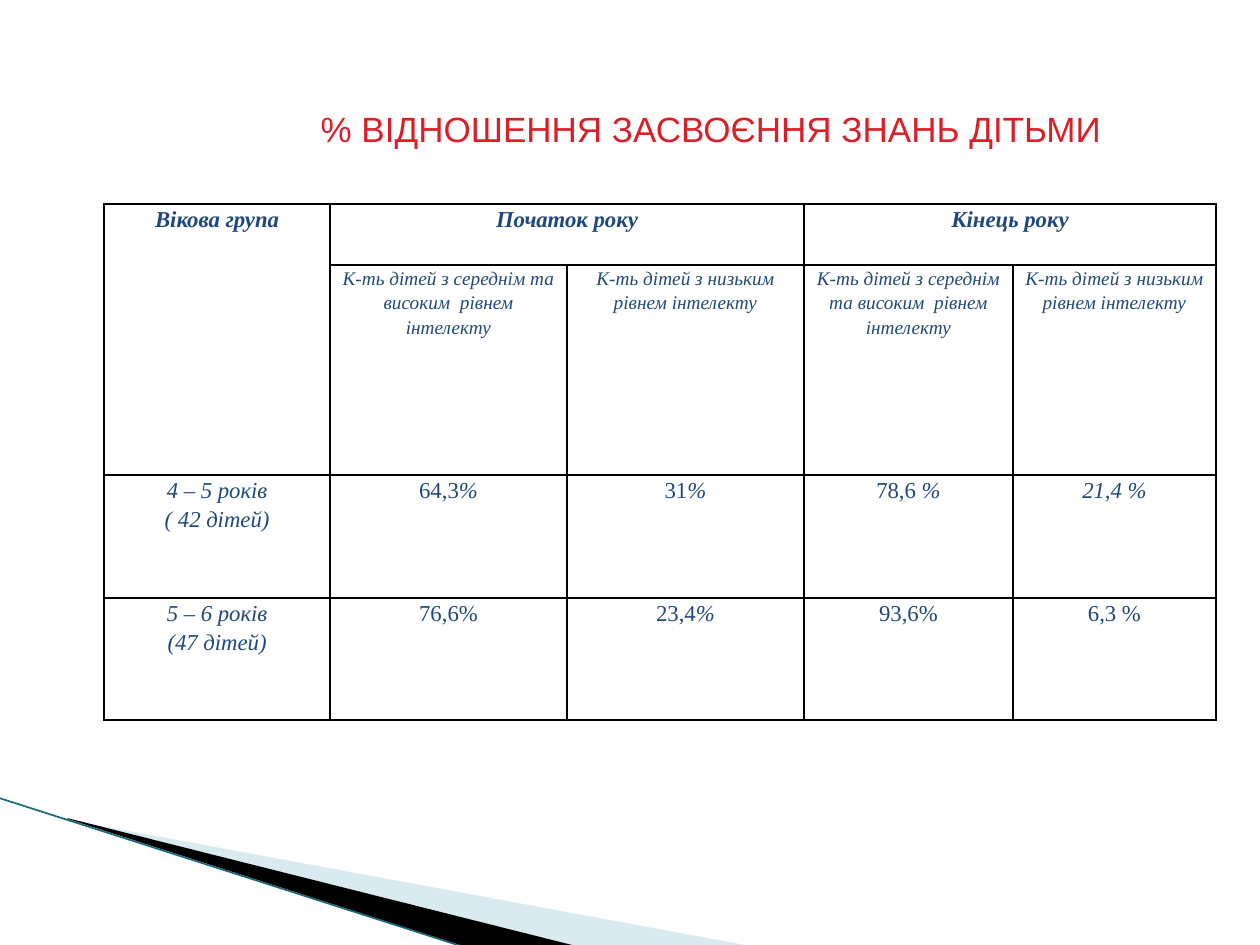
import pptx
import pptx.util
import pptx.dml.color
import pptx.enum.shapes
import pptx.enum.text
import pptx.oxml
import pptx.oxml.ns

SCALE = 914400 / 126  # EMU in one px
NAVY = "1F497D"
RED = "DA1F28"
BLACK = "000000"

HIGH = "К-ть дітей з середнім та високим  рівнем інтелекту"
LOW = "К-ть дітей з низьким рівнем інтелекту"
COLS = [226, 237, 237, 209, 203]
ROWS = [61, 210, 123, 122]
# Text after a bar is italic
DATA = [
    ["4 – 5 років\n( 42 дітей)", "64,3|%", "31|%", "78,6 |%", "|21,4 %"],
    ["5 – 6 років\n(47 дітей)", "76,6%", "23,4|%", "93,6%", "6,3 %"],
]


def px(num):
    return pptx.util.Emu(round(num * SCALE))


def paint(color, code):
    color.rgb = pptx.dml.color.RGBColor.from_string(code)


def write(frame, text, size, code, font, bold=False, italic=False, space=None):
    for num, line in enumerate(text.split("\n")):
        para = frame.add_paragraph() if num else frame.paragraphs[0]
        para.alignment = pptx.enum.text.PP_ALIGN.CENTER
        if space:
            para.line_spacing = space
        for part, words in enumerate(line.split("|")):
            if not words:
                continue
            run = para.add_run()
            run.text = words
            run.font.size = pptx.util.Pt(size)
            run.font.name = font
            run.font.bold = bold
            run.font.italic = italic or part > 0
            paint(run.font.color, code)


def add_wedge(slide, points, code, alpha=None):
    pen = slide.shapes.build_freeform(*points[0], scale=SCALE)
    pen.add_line_segments(points[1:], close=True)
    wedge = pen.convert_to_shape()
    wedge.shadow.inherit = False
    wedge.fill.solid()
    paint(wedge.fill.fore_color, code)
    wedge.line.fill.background()
    if alpha:
        tint = wedge.fill._xPr.find(".//" + pptx.oxml.ns.qn("a:srgbClr"))
        node = pptx.oxml.parse_xml(
            f'<a:alpha {pptx.oxml.ns.nsdecls("a")} val="{alpha * 1000}"/>')
        tint.append(node)


def add_line(slide, start, end, code, width):
    line = slide.shapes.add_connector(
        pptx.enum.shapes.MSO_CONNECTOR.STRAIGHT,
        *[px(num) for num in start + end])
    paint(line.line.color, code)
    line.line.width = pptx.util.Pt(width)
    line._element.spPr.append(pptx.oxml.parse_xml(
        f'<a:effectLst {pptx.oxml.ns.nsdecls("a")}/>'))


def style_cell(cell):
    cell.margin_left = cell.margin_right = px(9)
    cell.margin_top = cell.margin_bottom = 0
    props = cell._tc.get_or_add_tcPr()
    for side in "LRTB":
        props.append(pptx.oxml.parse_xml(
            f'<a:ln{side} {pptx.oxml.ns.nsdecls("a")} w="12700"><a:solidFill>'
            f'<a:srgbClr val="{BLACK}"/></a:solidFill></a:ln{side}>'))
    cell.fill.background()


def add_table(slide, left, top):
    table = slide.shapes.add_table(
        len(ROWS), len(COLS), px(left), px(top),
        px(sum(COLS)), px(sum(ROWS))).table
    table.first_row = table.horz_banding = False
    for col, width in zip(table.columns, COLS):
        col.width = px(width)
    for row, height in zip(table.rows, ROWS):
        row.height = px(height)
    for cell in table.iter_cells():
        style_cell(cell)

    def fill(row, col, text, size=13, **form):
        write(table.cell(row, col).text_frame, text, size, NAVY,
              "Times New Roman", space=1.15, **form)

    # Merged headings
    heads = [(0, 1, 0, "Вікова група"), (1, 0, 2, "Початок року"),
             (3, 0, 4, "Кінець року")]
    for col, row, last, text in heads:
        table.cell(0, col).merge(table.cell(row, last))
        fill(0, col, text, bold=True, italic=True)
    for col, text in enumerate([HIGH, LOW] * 2, 1):
        fill(1, col, text, size=11, italic=True)

    # Age groups
    for row, texts in enumerate(DATA, 2):
        for col, text in enumerate(texts):
            fill(row, col, text, italic=col == 0)


def add_title(slide, text):
    title = slide.shapes.title
    title.left, title.top = px(162), px(101)
    title.width, title.height = px(1098), px(55)
    frame = title.text_frame
    frame.word_wrap = True
    frame.vertical_anchor = pptx.enum.text.MSO_ANCHOR.MIDDLE
    write(frame, text, 20, RED, "Arial")


def main():
    deck = pptx.Presentation()
    deck.slide_width, deck.slide_height = px(1260), px(945)
    slide = deck.slides.add_slide(deck.slide_layouts[5])

    # Corner decoration
    add_wedge(slide, [(69, 820), (750, 946), (575, 946), (69, 819)],
              "A0CBDC", alpha=40)
    add_wedge(slide, [(67, 818), (576, 946), (469, 948), (68, 819)], BLACK)
    add_line(slide, (-1, 798), (467, 948), "17687A", 0.95)

    # Content
    add_table(slide, 104, 204)
    add_title(slide, "% ВІДНОШЕННЯ ЗАСВОЄННЯ ЗНАНЬ ДІТЬМИ")
    deck.save("out.pptx")


if __name__ == "__main__":
    main()
